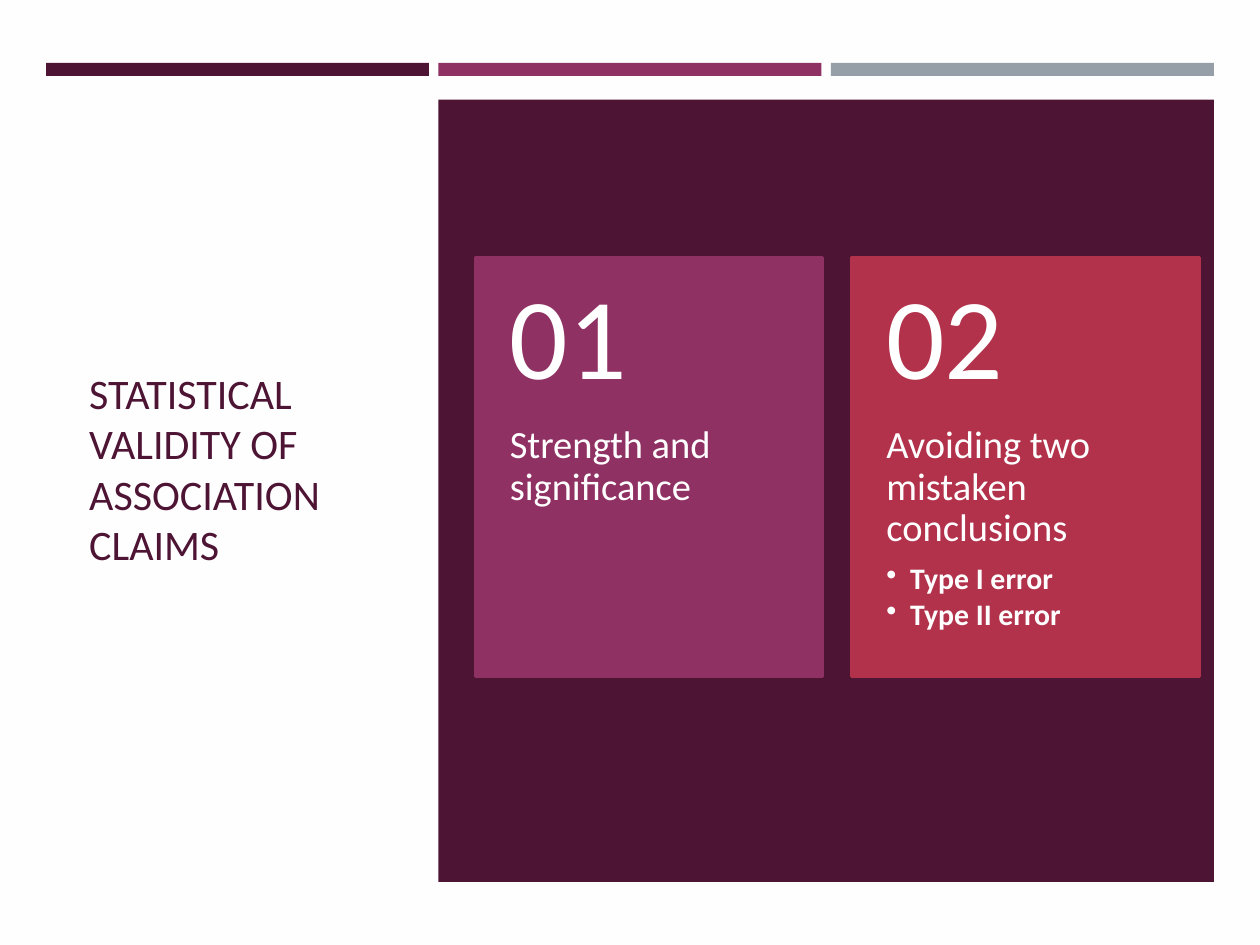
import lxml.etree
import pptx
import pptx.dml.color
import pptx.enum.shapes
import pptx.enum.text
import pptx.oxml.ns
import pptx.util
from pptx.util import Cm

PLUM, PURPLE, RED, GREY = "4D1434", "903163", "B2324B", "969FA7"
WHITE, PAPER = "FFFFFF", "FFFEFF"


def color(hex_string):
    """Return the color for a hex string."""
    return pptx.dml.color.RGBColor.from_string(hex_string)


def add_block(slide, left, top, width, height, fill, line_width=None):
    """Add a plain rectangle, outlined in its own color if a width is given."""
    shape = slide.shapes.add_shape(
        pptx.enum.shapes.MSO_SHAPE.RECTANGLE, left, top, width, height)
    shape.shadow.inherit = False
    shape.fill.solid()
    shape.fill.fore_color.rgb = color(fill)
    if line_width is None:
        shape.line.fill.background()
    else:
        shape.line.color.rgb = color(fill)
        shape.line.width = pptx.util.Pt(line_width)


def add_text_frame(slide, left, top, width, height, margins, middle=False):
    """Add a wrapping text box and return its text frame."""
    frame = slide.shapes.add_textbox(left, top, width, height).text_frame
    frame.word_wrap = True
    frame.margin_left = frame.margin_right = margins[0]
    frame.margin_top, frame.margin_bottom = margins[1:]
    anchor = pptx.enum.text.MSO_ANCHOR
    frame.vertical_anchor = anchor.MIDDLE if middle else anchor.TOP
    return frame


def add_bullet(paragraph):
    """Give the paragraph a hanging bullet."""
    properties = paragraph._p.get_or_add_pPr()
    indent = Cm(0.48)
    properties.set("marL", str(indent))
    properties.set("indent", str(-indent))
    bullet = lxml.etree.SubElement(properties, pptx.oxml.ns.qn("a:buChar"))
    bullet.set("char", "•")


def write_paragraph(paragraph, text, size, text_color=WHITE, spacing=0.9,
                    after=0.35, bullet=False):
    """Fill a paragraph, with the space after it as a share of its size."""
    paragraph.text = text
    paragraph.line_spacing = spacing
    paragraph.space_after = pptx.util.Pt(round(size * after, 1))
    if bullet:
        add_bullet(paragraph)
    paragraph.font.name = "Calibri"
    paragraph.font.size = pptx.util.Pt(size)
    paragraph.font.bold = bullet
    paragraph.font.color.rgb = color(text_color)


def add_card(slide, left, fill, number, heading, points):
    """Add a colored card with a number, a heading and bullet points."""
    top, width = Cm(5.2), Cm(7.01)
    number_height, body_height = Cm(3.38), Cm(5.06)
    add_block(slide, left, top, width, number_height + body_height, fill, 1.75)
    body = add_text_frame(slide, left, top + number_height, width, body_height,
                          (Cm(0.7), Cm(0), Cm(0.91)))
    write_paragraph(body.paragraphs[0], heading, 22)
    for point in points:
        write_paragraph(body.add_paragraph(), point, 17, after=0.15, bullet=True)
    label = add_text_frame(slide, left, top, width, number_height,
                           (Cm(0.7), Cm(0.46), Cm(0.46)), middle=True)
    write_paragraph(label.paragraphs[0], number, 66)


def main():
    """Build the slide and save it."""
    presentation = pptx.Presentation()
    presentation.slide_width, presentation.slide_height = Cm(25.4), Cm(19.05)
    slide = presentation.slides.add_slide(presentation.slide_layouts[6])
    add_block(slide, 0, 0, presentation.slide_width, presentation.slide_height, PAPER)

    title = add_text_frame(slide, Cm(1.55), Cm(2.9), Cm(6.35), Cm(13.08),
                           (Cm(0.25), Cm(0.13), Cm(0.13)), middle=True)
    write_paragraph(title.paragraphs[0], "STATISTICAL VALIDITY OF ASSOCIATION CLAIMS",
                    24, PLUM, spacing=1.0, after=0)

    for index, fill in enumerate((PLUM, PURPLE, GREY)):
        add_block(slide, Cm(0.93 + 7.91 * index), Cm(1.27), Cm(7.72), Cm(0.26), fill)
    add_block(slide, Cm(8.84), Cm(2.01), Cm(15.63), Cm(15.77), PLUM)

    cards = (
        (PURPLE, "01", "Strength and significance", ()),
        (RED, "02", "Avoiding two mistaken conclusions",
         ("Type I error", "Type II error")),
    )
    for index, card in enumerate(cards):
        add_card(slide, Cm(9.58 + 7.59 * index), *card)
    presentation.save("out.pptx")


if __name__ == "__main__":
    main()
